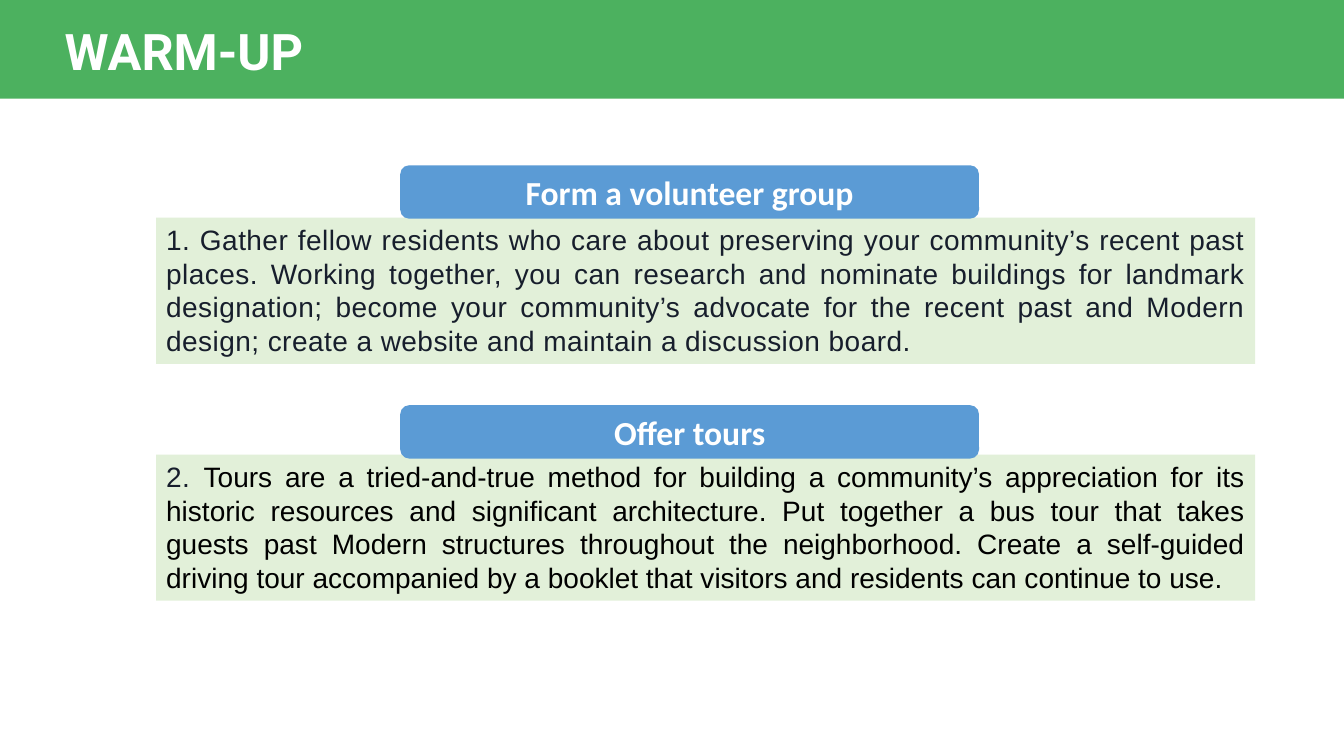
from pptx import Presentation
from pptx.dml.color import RGBColor
from pptx.enum.shapes import MSO_SHAPE
from pptx.enum.text import MSO_ANCHOR, MSO_AUTO_SIZE, PP_ALIGN
from pptx.util import Inches, Pt

RECTANGLE = MSO_SHAPE.RECTANGLE
ROUNDED = MSO_SHAPE.ROUNDED_RECTANGLE
TOP, MIDDLE = MSO_ANCHOR.TOP, MSO_ANCHOR.MIDDLE
LEFT, CENTER, JUSTIFY = PP_ALIGN.LEFT, PP_ALIGN.CENTER, PP_ALIGN.JUSTIFY
NO_AUTOFIT = MSO_AUTO_SIZE.NONE

GREEN = RGBColor(0x4C, 0xB1, 0x5F)
PALE_GREEN = RGBColor(0xE2, 0xF0, 0xD9)
BLUE = RGBColor(0x5B, 0x9B, 0xD5)
WHITE = RGBColor(0xFF, 0xFF, 0xFF)
NAVY = RGBColor(0x17, 0x1E, 0x2C)
BLACK = RGBColor(0x00, 0x00, 0x00)

SLIDE_WIDTH, SLIDE_HEIGHT = 13.33, 7.5
HEADING_HEIGHT, BODY_HEIGHT = 0.53, 1.45

SECTIONS = [
    ((1.55, 1.64, 10.9, 1.97), "Form a volunteer group", [
        ("1. Gather fellow residents who care about preserving your "
         "community’s recent past places. Working together, you can research "
         "and nominate buildings for landmark designation; become your "
         "community’s advocate for the recent past and Modern design; create "
         "a website and maintain a discussion board.", NAVY, 0.3),
    ]),
    ((1.55, 4.02, 10.9, 1.94), "Offer tours", [
        ("2. ", NAVY, 0.3),
        ("Tours are a tried-and-true method for building a community’s "
         "appreciation for its historic resources and significant "
         "architecture. Put together a bus tour that takes guests past Modern "
         "structures throughout the neighborhood. Create a self-guided "
         "driving tour accompanied by a booklet that visitors and residents "
         "can continue to use.", BLACK, 0),
    ]),
]


def add_panel(slide, kind, box, color):
    """Add a flat filled shape without an outline."""
    shape = slide.shapes.add_shape(kind, *map(Inches, box))
    shape.shadow.inherit = False
    shape.fill.solid()
    shape.fill.fore_color.rgb = color
    shape.line.fill.background()
    return shape


def write_text(shape, runs, font_name, size, alignment, anchor, bold=False):
    """Write one paragraph from (text, colour, letter spacing) runs."""
    frame = shape.text_frame
    frame.word_wrap = True
    frame.auto_size = NO_AUTOFIT
    frame.vertical_anchor = anchor
    paragraph = frame.paragraphs[0]
    paragraph.alignment = alignment
    for text, color, spacing in runs:
        run = paragraph.add_run()
        run.text = text
        font = run.font
        font.name, font.size, font.bold = font_name, Pt(size), bold
        font.color.rgb = color
        if spacing:
            run._r.get_or_add_rPr().set("spc", str(round(spacing * 100)))


def add_header(slide, box, text):
    """Place the green bar in the box, with the title on top of it."""
    left, top, width, height = box
    bar = add_panel(slide, RECTANGLE, box, GREEN)
    title = slide.shapes.title
    bar._element.addnext(title._element)
    title.left, title.top = Inches(left + 0.54), Inches(top + 0.14)
    title.width, title.height = Inches(5), Inches(height - 0.27)
    write_text(title, [(text, WHITE, 0)], "Roboto", 36, LEFT, MIDDLE, True)


def add_section(slide, box, heading_text, runs):
    """Put the text at the foot of the box and the heading at its top."""
    left, top, width, height = box
    body_top = top + height - BODY_HEIGHT
    body = add_panel(slide, RECTANGLE, (left, body_top, width, BODY_HEIGHT),
                     PALE_GREEN)
    write_text(body, runs, "Arial", 20, JUSTIFY, TOP)
    heading_box = (left + 2.42, top, 5.74, HEADING_HEIGHT)
    heading = add_panel(slide, ROUNDED, heading_box, BLUE)
    write_text(heading, [(heading_text, WHITE, 0)], "Calibri", 24, CENTER,
               MIDDLE, True)


def main():
    """Build the warm-up slide and save it."""
    presentation = Presentation()
    presentation.slide_width = Inches(SLIDE_WIDTH)
    presentation.slide_height = Inches(SLIDE_HEIGHT)
    title_only = presentation.slide_layouts[5]
    slide = presentation.slides.add_slide(title_only)
    add_header(slide, (0, 0, SLIDE_WIDTH, 0.98), "WARM-UP")
    for box, heading_text, runs in SECTIONS:
        add_section(slide, box, heading_text, runs)
    presentation.save("out.pptx")


if __name__ == "__main__":
    main()
